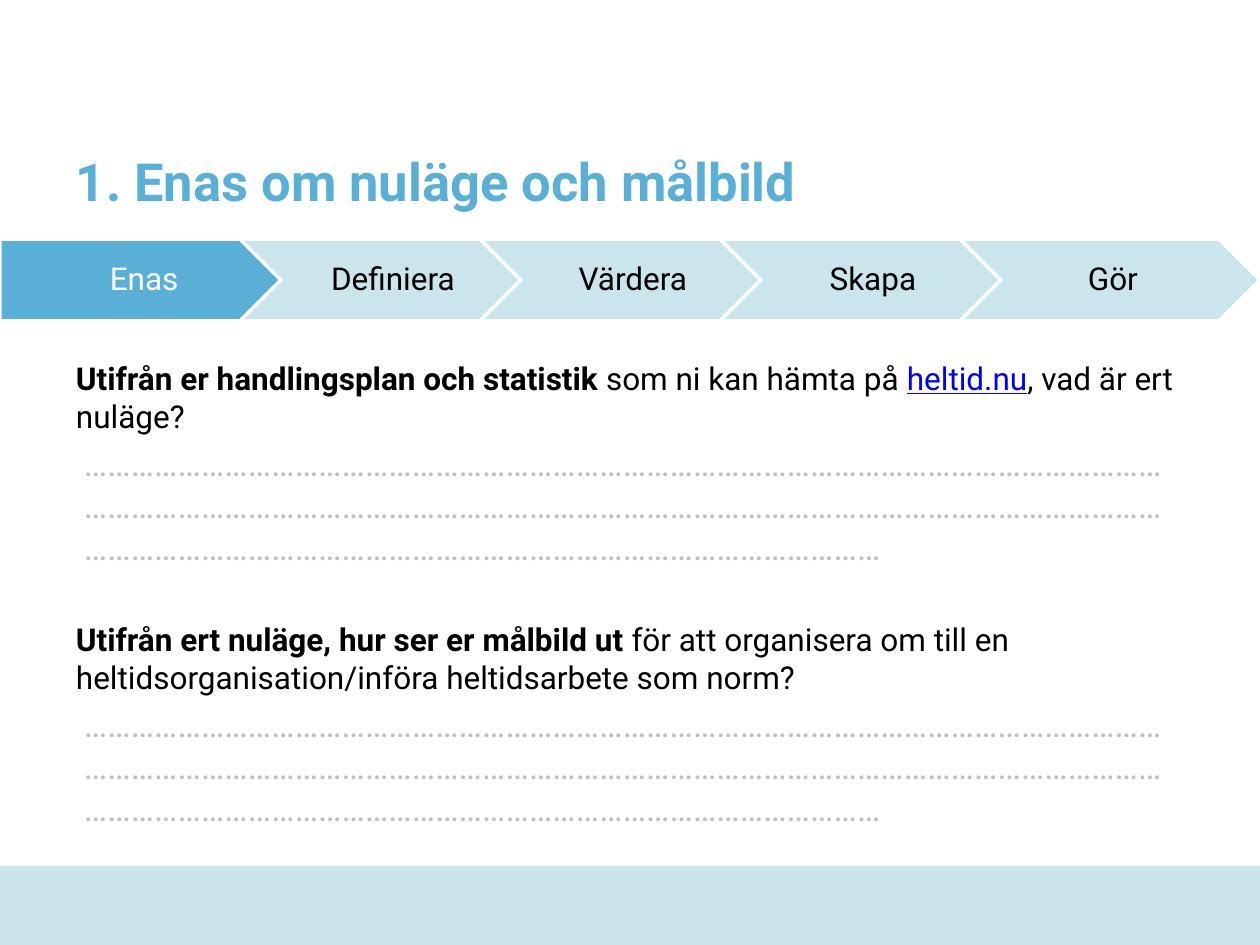
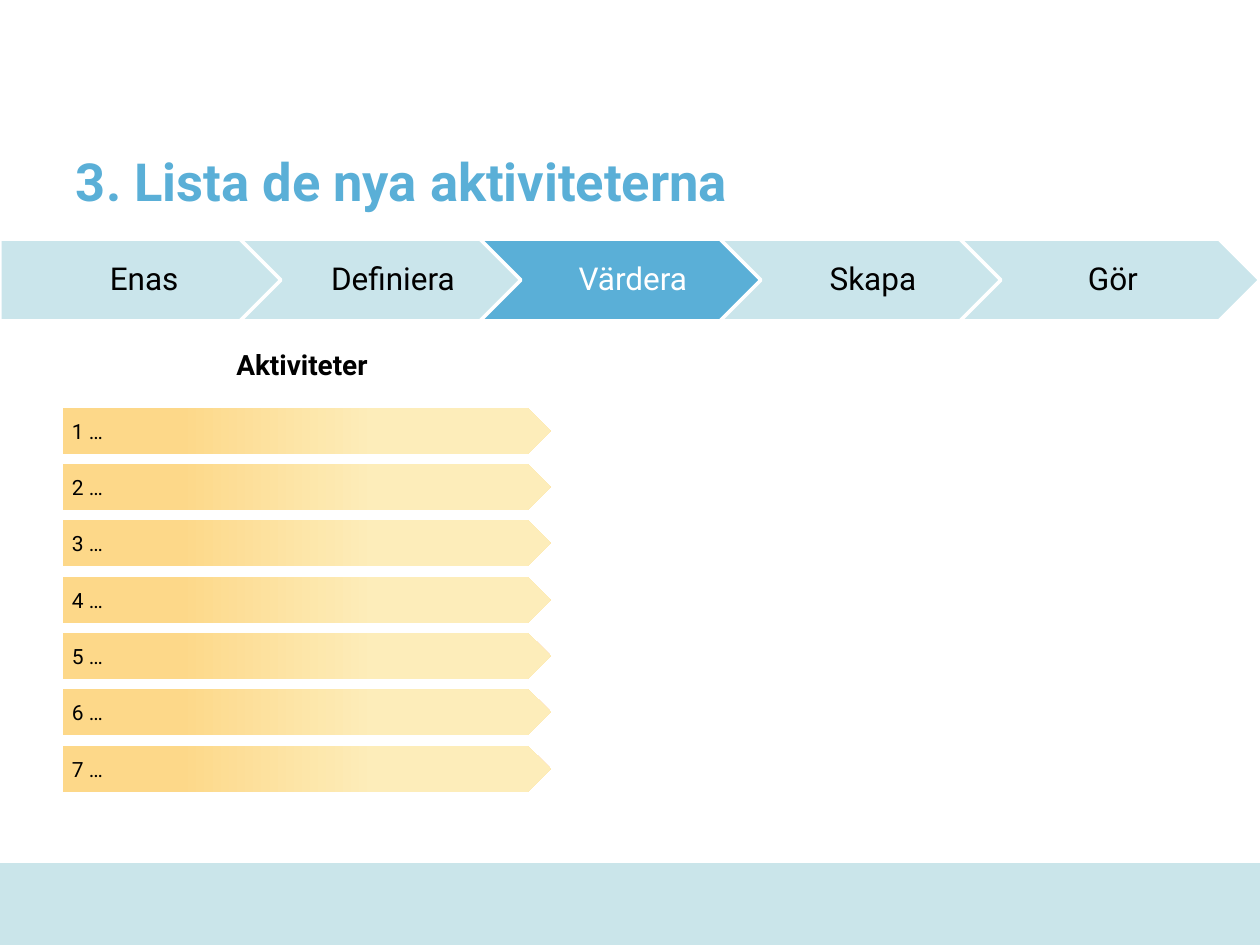
from pptx import Presentation, util as u
from pptx.dml.color import RGBColor
from pptx.enum import shapes, text

SCALE = u.Inches(1) / 126  # EMU per px
FONT = "Roboto"
COLORS = {
    "accent": "5AAFD7", "band": "CAE5EA", "step": "CAE5EB", "white": "FFFFFF",
    "black": "000000", "link": "0000FF", "dots": "BFBFBF",
    "bar_dark": "FDD889", "bar_light": "FDEDBA",
}
FORMATS = {
    "title": {"size": 30, "bold": True, "color": "accent"},
    "body": {"size": 18, "color": "black"},
    "strong": {"size": 18, "bold": True, "color": "black"},
    "link": {"size": 18, "underline": True, "color": "link"},
    "dots": {"size": 20, "color": "dots"},
    "active": {"size": 18, "color": "white"},
    "heading": {"size": 16, "bold": True, "color": "black"},
    "bar": {"size": 12, "color": "black"},
}
STEPS = ["Enas", "Definiera", "Värdera", "Skapa", "Gör"]
PLATE, CHEVRON = shapes.MSO_SHAPE.PENTAGON, shapes.MSO_SHAPE.CHEVRON
CENTER = text.PP_ALIGN.CENTER


def add_box(slide, box, kind=None, fill=None, margins=(13, 6, 13, 6), middle=True):
    """Add a preset shape, or a text box when no kind is given."""
    place = [round(px * SCALE) for px in box]
    if kind is None:
        shape = slide.shapes.add_textbox(*place)
    else:
        shape = slide.shapes.add_shape(kind, *place)
        shape.shadow.inherit = False
        shape.line.fill.background()
    if fill:
        shape.fill.solid()
        shape.fill.fore_color.rgb = RGBColor.from_string(COLORS[fill])
    frame = shape.text_frame
    frame.word_wrap = True
    frame.vertical_anchor = text.MSO_ANCHOR.MIDDLE if middle else text.MSO_ANCHOR.TOP
    for side, px in zip(("left", "top", "right", "bottom"), margins):
        setattr(frame, f"margin_{side}", round(px * SCALE))
    return shape


def write(paragraph, runs, align=text.PP_ALIGN.LEFT):
    """Fill a paragraph with (words, format name) runs."""
    paragraph.alignment = align
    for words, name in runs:
        run = paragraph.add_run()
        run.text = words
        run.font.name = FONT
        for key, value in FORMATS[name].items():
            if key == "color":
                run.font.color.rgb = RGBColor.from_string(COLORS[value])
            else:
                setattr(run.font, key, u.Pt(value) if key == "size" else value)


presentation = Presentation()
presentation.slide_width, presentation.slide_height = u.Inches(10), u.Inches(7.5)

# Shared frame: bottom band, title and process steps
slides = []
for title, active, band_top in [
    ("1. Enas om nuläge och målbild", "Enas", 866),
    ("3. Lista de nya aktiviteterna", "Värdera", 863),
]:
    slide = presentation.slides.add_slide(presentation.slide_layouts[6])
    slides.append(slide)
    add_box(slide, (0, band_top, 1260, 945 - band_top), shapes.MSO_SHAPE.RECTANGLE, "band")
    title_box = add_box(slide, (63, 101, 1134, 158))
    write(title_box.text_frame.paragraphs[0], [(title, "title")])

    for index, step in enumerate(STEPS):
        shape = add_box(slide, (240 * index, 239, 300, 82),
                        CHEVRON if index else PLATE,
                        "accent" if step == active else "step",
                        margins=(10 if index else 13, 6, 4, 6))
        shape.line.color.rgb = RGBColor.from_string(COLORS["white"])
        shape.line.width = u.Pt(2)
        paragraph = shape.text_frame.paragraphs[0]
        paragraph.line_spacing = 0.9
        write(paragraph, [(step, "active" if step == active else "body")], CENTER)

# Slide 1: two questions, each with dotted answer lines
questions = [
    [("Utifrån er handlingsplan och statistik ", "strong"),
     ("som ni kan hämta på ", "body"),
     ("heltid.nu", "link"),
     (", vad är ert nuläge?", "body")],
    [("Utifrån ert nuläge, hur ser er målbild ut ", "strong"),
     ("för att organisera om till en heltidsorganisation/införa heltidsarbete som norm?", "body")],
]
frame = add_box(slides[0], (63, 349, 1134, 510), margins=(13, 10, 20, 6), middle=False).text_frame
for index, question in enumerate(questions):
    paragraph = frame.add_paragraph() if index else frame.paragraphs[0]
    if index:
        paragraph.space_before = u.Pt(30)
    write(paragraph, question)
    answer = frame.add_paragraph()
    answer.space_before = u.Pt(4)
    answer_properties = answer._p.get_or_add_pPr()
    answer_properties.set("marL", str(round(8 * SCALE)))
    answer_properties.set("indent", "0")
    write(answer, [("…" * 126, "dots")])

# Slide 2: heading and numbered activity bars
heading = add_box(slides[1], (147, 340, 310, 48))
write(heading.text_frame.paragraphs[0], [("Aktiviteter", "heading")], CENTER)
for index in range(7):
    bar = add_box(slides[1], (63, 408 + index * 338 // 6, 488, 46), PLATE, margins=(9, 5, 9, 5))
    bar.fill.gradient()
    bar.fill.gradient_angle = 0
    for stop, position, color in zip(bar.fill.gradient_stops, (0.24, 0.64), ("bar_dark", "bar_light")):
        stop.position = position
        stop.color.rgb = RGBColor.from_string(COLORS[color])
    write(bar.text_frame.paragraphs[0], [(f"{index + 1} …", "bar")])

presentation.save("out.pptx")
